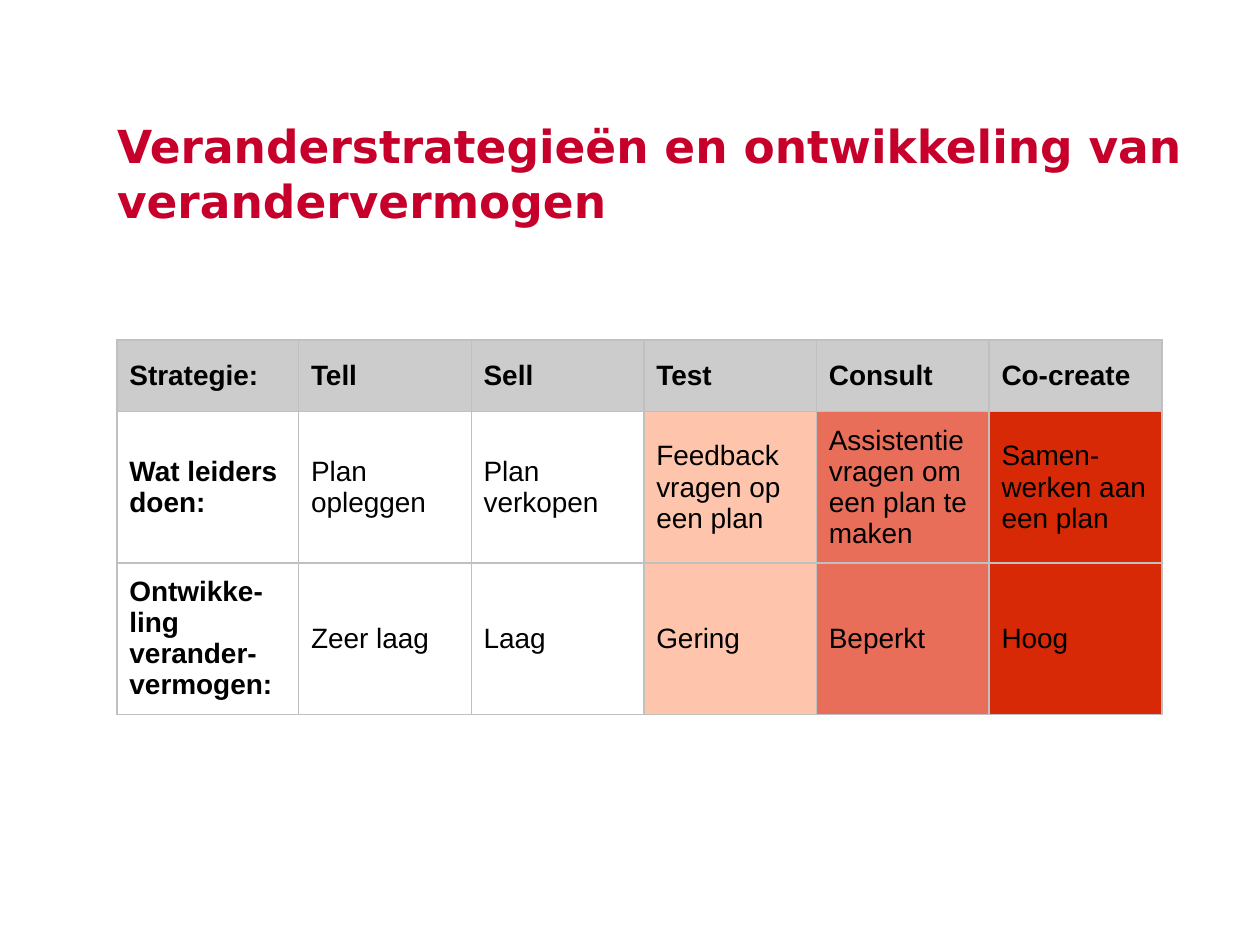
from dataclasses import dataclass

from lxml import etree
from pptx import Presentation
from pptx import util as u
from pptx.dml import color
from pptx.enum import text
from pptx.oxml import ns


@dataclass(frozen=True)
class Theme:
    """Colours, fonts and type sizes of the slide."""
    title_color: str = "C7002B"
    text_color: str = "000000"
    border_color: str = "C0C0C0"
    header_fill: str = "CCCCCC"
    label_fill: str = "FFFFFF"
    column_fills: tuple = (None, None, "FEC5AC", "E96E59", "D82906")
    title_font: str = "DejaVu Sans"
    table_font: str = "Arial"
    title_size: int = 26
    table_size: int = 16
    border_width: int = 1


THEME = Theme()
TITLE = "Veranderstrategieën en ontwikkeling van verandervermogen"
ROWS = (
    ("Strategie:", "Tell", "Sell", "Test", "Consult", "Co-create"),
    ("Wat leiders doen:", "Plan opleggen", "Plan verkopen", "Feedback vragen op een plan",
     "Assistentie vragen om een plan te maken", "Samen-werken aan een plan"),
    ("Ontwikke-ling verander-vermogen:", "Zeer laag", "Laag", "Gering", "Beperkt", "Hoog"),
)
LEFT = u.Cm(2.36)
COLUMN_WIDTHS = [u.Cm(3.66)] + [u.Cm(3.48)] * 5
ROW_HEIGHTS = [u.Cm(1.45)] + [u.Cm(3.05)] * 2


def set_values(target, values):
    """Set each attribute named in values on the target."""
    for name, value in values.items():
        setattr(target, name, value)


def write_text(text_frame, content, font_color, font_values):
    """Write one formatted paragraph into a text frame."""
    paragraph = text_frame.paragraphs[0]
    run = paragraph.add_run()
    run.text = content
    set_values(run.font, font_values)
    run.font.color.rgb = color.RGBColor.from_string(font_color)


def add_title(slide):
    """Add the slide title."""
    shape = slide.shapes.add_textbox(LEFT, u.Cm(2.39), u.Cm(21.59), u.Cm(1.88))
    set_values(shape.text_frame, {
        "word_wrap": True, "vertical_anchor": text.MSO_ANCHOR.TOP,
        "margin_left": 0, "margin_right": 0, "margin_top": 0, "margin_bottom": 0,
    })
    write_text(shape.text_frame, TITLE, THEME.title_color, {
        "name": THEME.title_font, "size": u.Pt(THEME.title_size), "bold": True,
    })


def add_borders(cell):
    """Draw a thin line on all four sides of a cell."""
    properties = cell._tc.get_or_add_tcPr()
    for side in ("a:lnL", "a:lnR", "a:lnT", "a:lnB"):
        line = etree.SubElement(properties, ns.qn(side), w=str(u.Pt(THEME.border_width)))
        fill = etree.SubElement(line, ns.qn("a:solidFill"))
        etree.SubElement(fill, ns.qn("a:srgbClr"), val=THEME.border_color)


def cell_fill(row, column):
    """Return the fill colour for a table position."""
    if row == 0:
        return THEME.header_fill
    return THEME.label_fill if column == 0 else THEME.column_fills[column - 1]


def format_cell(cell, content, fill_color, bold):
    """Fill, frame and write one table cell."""
    add_borders(cell)
    if fill_color:
        cell.fill.solid()
        cell.fill.fore_color.rgb = color.RGBColor.from_string(fill_color)
    else:
        cell.fill.background()
    set_values(cell, {
        "vertical_anchor": text.MSO_ANCHOR.MIDDLE,
        "margin_left": u.Cm(0.25), "margin_right": u.Cm(0.25),
        "margin_top": u.Cm(0.13), "margin_bottom": u.Cm(0.13),
    })
    write_text(cell.text_frame, content, THEME.text_color, {
        "name": THEME.table_font, "size": u.Pt(THEME.table_size), "bold": bold,
    })


def add_strategy_table(slide):
    """Add the table of change strategies."""
    table = slide.shapes.add_table(
        len(ROWS), len(COLUMN_WIDTHS), LEFT, u.Cm(6.85), sum(COLUMN_WIDTHS), sum(ROW_HEIGHTS)
    ).table
    set_values(table, {"first_row": False, "horz_banding": False})
    for column, width in zip(table.columns, COLUMN_WIDTHS):
        column.width = width
    for row, height in zip(table.rows, ROW_HEIGHTS):
        row.height = height
    for row, contents in enumerate(ROWS):
        for column, content in enumerate(contents):
            format_cell(table.cell(row, column), content, cell_fill(row, column),
                        row == 0 or column == 0)


def main():
    """Build and save the presentation."""
    presentation = Presentation()
    set_values(presentation, {"slide_width": u.Cm(25.4), "slide_height": u.Cm(19.05)})
    slide = presentation.slides.add_slide(presentation.slide_layouts[6])
    add_title(slide)
    add_strategy_table(slide)
    presentation.save("out.pptx")


if __name__ == "__main__":
    main()
